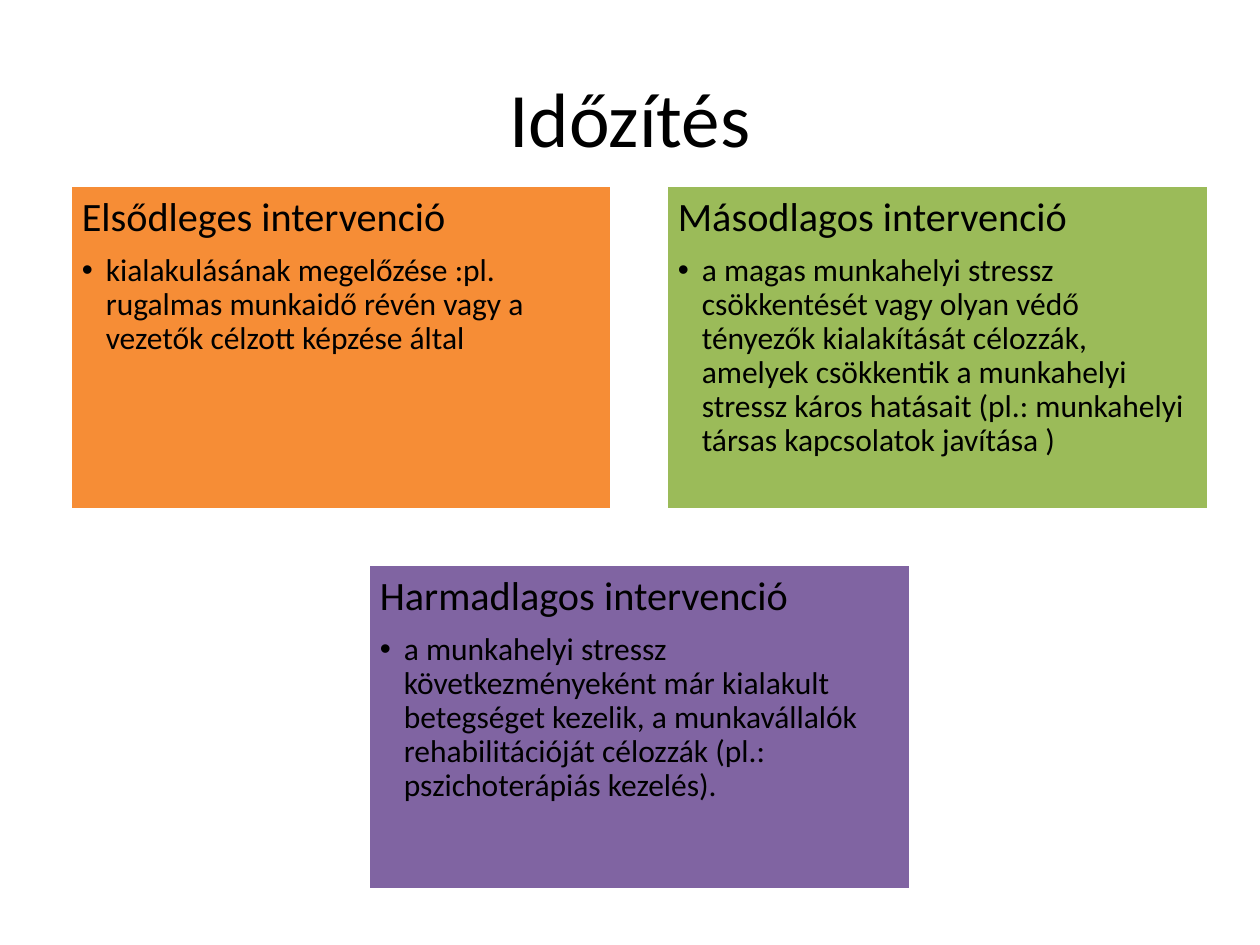
from dataclasses import dataclass

from lxml.etree import SubElement
from pptx import Presentation
from pptx.dml.color import RGBColor
from pptx.enum.shapes import MSO_SHAPE
from pptx.enum.text import MSO_ANCHOR, MSO_AUTO_SIZE, PP_ALIGN
from pptx.oxml.ns import qn
from pptx.util import Inches, Pt


@dataclass(frozen=True)
class Theme:
    font: str = "Calibri"
    text: str = "000000"
    outline: str = "FFFFFF"
    orange: str = "F68D36"
    green: str = "9BBB59"
    purple: str = "8064A2"
    title_size: int = 44
    heading_size: int = 23
    detail_size: int = 18


THEME = Theme()

CARD_WIDTH, CARD_HEIGHT, CARD_GAP = 4.3, 2.58, 0.43
CARDS_LEFT, CARDS_TOP = 0.56, 1.47
COLUMN_STEP = CARD_WIDTH + CARD_GAP
ROW_STEP = CARD_HEIGHT + CARD_GAP

CARDS = [
    (0, 0, THEME.orange, "Elsődleges intervenció",
     "kialakulásának megelőzése :pl. rugalmas munkaidő révén vagy a "
     "vezetők célzott képzése által"),
    (1, 0, THEME.green, "Másodlagos intervenció",
     "a magas munkahelyi stressz csökkentését vagy olyan védő tényezők "
     "kialakítását célozzák, amelyek csökkentik a munkahelyi stressz káros "
     "hatásait (pl.: munkahelyi társas kapcsolatok javítása )"),
    (0.5, 1, THEME.purple, "Harmadlagos intervenció",
     "a munkahelyi stressz következményeként már kialakult betegséget "
     "kezelik, a munkavállalók rehabilitációját célozzák (pl.: "
     "pszichoterápiás kezelés)."),
]


def apply_format(target, values):
    for name, value in values.items():
        setattr(target, name, value)


def write_paragraph(para, text, size, **values):
    apply_format(para, values)
    span = para.add_run()
    span.text = text
    apply_format(span.font, {"name": THEME.font, "size": Pt(size)})
    span.font.color.rgb = RGBColor.from_string(THEME.text)


def add_bullet(para, indent):
    properties = para._p.get_or_add_pPr()
    properties.set("marL", str(indent))
    properties.set("indent", str(-indent))
    SubElement(properties, qn("a:buFont"), typeface="Arial")
    SubElement(properties, qn("a:buChar"), char="•")


def place_box(shape, box):
    names = ("left", "top", "width", "height")
    apply_format(shape, dict(zip(names, map(Inches, box))))


def add_title(page, box, text):
    title = page.shapes.title
    place_box(title, box)
    apply_format(title.text_frame, {
        "vertical_anchor": MSO_ANCHOR.MIDDLE,
        "auto_size": MSO_AUTO_SIZE.NONE,
    })
    write_paragraph(title.text_frame.paragraphs[0], text, THEME.title_size,
                    alignment=PP_ALIGN.CENTER)


def add_card(page, box, color, heading, detail):
    card = page.shapes.add_shape(MSO_SHAPE.RECTANGLE, *map(Inches, box))
    card.shadow.inherit = False
    card.fill.solid()
    card.fill.fore_color.rgb = RGBColor.from_string(color)
    card.line.color.rgb = RGBColor.from_string(THEME.outline)
    card.line.width = Pt(2)

    frame = card.text_frame
    margins = ("margin_left", "margin_top", "margin_right", "margin_bottom")
    apply_format(frame, {
        "word_wrap": True,
        "vertical_anchor": MSO_ANCHOR.TOP,
        **dict.fromkeys(margins, Inches(0.09)),
    })
    shared = {"alignment": PP_ALIGN.LEFT, "line_spacing": 0.9}
    write_paragraph(frame.paragraphs[0], heading, THEME.heading_size,
                    space_after=Pt(8), **shared)
    bullet = frame.add_paragraph()
    write_paragraph(bullet, detail, THEME.detail_size,
                    level=1, space_after=Pt(2.7), **shared)
    add_bullet(bullet, Inches(0.19))


def main():
    deck = Presentation()
    apply_format(deck, {"slide_width": Inches(10),
                        "slide_height": Inches(7.5)})
    page = deck.slides.add_slide(deck.slide_layouts[5])
    add_title(page, (0.5, 0.3, 9, 1.25), "Időzítés")
    for column, row, color, heading, detail in CARDS:
        box = (CARDS_LEFT + column * COLUMN_STEP,
               CARDS_TOP + row * ROW_STEP, CARD_WIDTH, CARD_HEIGHT)
        add_card(page, box, color, heading, detail)
    deck.save("out.pptx")


if __name__ == "__main__":
    main()
